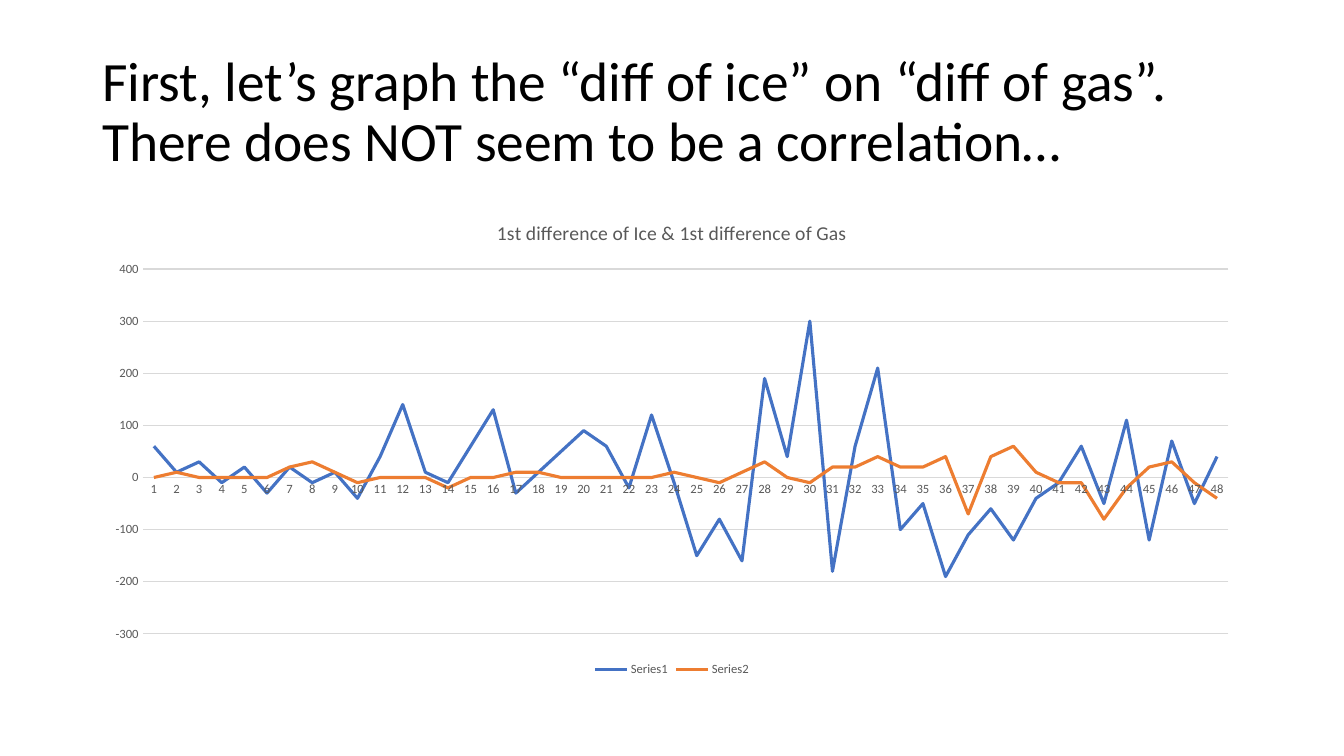
import pptx
import pptx.chart.data
import pptx.dml.color
import pptx.enum.chart
import pptx.enum.text
import pptx.util

Pt = pptx.util.Pt
FONT = "Calibri"
GREY = "595959"
PALE = "D9D9D9"
ICE = [60, 10, 30, -10, 20, -30, 20, -10, 10, -40, 40, 140,
       10, -10, 60, 130, -30, 10, 50, 90, 60, -20, 120, -10,
       -150, -80, -160, 190, 40, 300, -180, 60, 210, -100, -50, -190,
       -110, -60, -120, -40, -10, 60, -50, 110, -120, 70, -50, 40]
GAS = [0, 10, 0, 0, 0, 0, 20, 30, 10, -10, 0, 0,
       0, -20, 0, 0, 10, 10, 0, 0, 0, 0, 0, 10,
       0, -10, 10, 30, 0, -10, 20, 20, 40, 20, 20, 40,
       -70, 40, 60, 10, -10, -10, -80, -20, 20, 30, -10, -40]
LINES = [("Series1", ICE, "4472C4"), ("Series2", GAS, "ED7D31")]


def color(code):
    """Turn a hex string into a colour."""
    return pptx.dml.color.RGBColor.from_string(code)


def style(font, size, code):
    """Set face, size and colour of a font."""
    font.name = FONT
    font.size = Pt(size)
    font.bold = False
    font.color.rgb = color(code)


def stroke(line, code, width):
    """Give a line its colour and width."""
    line.color.rgb = color(code)
    line.width = Pt(width)


def add_run(para, text, size, code):
    """Add one styled run to a paragraph."""
    run = para.add_run()
    run.text = text
    style(run.font, size, code)


def add_head(slide, text, box):
    """Add the heading of the slide."""
    frame = slide.shapes.add_textbox(*map(Pt, box)).text_frame
    frame.word_wrap = True
    frame.vertical_anchor = pptx.enum.text.MSO_ANCHOR.MIDDLE
    para = frame.paragraphs[0]
    para.line_spacing = 0.9
    add_run(para, text, 39.6, "000000")


def set_axes(chart):
    """Style both axes and the grid."""
    for axis in (chart.category_axis, chart.value_axis):
        axis.major_tick_mark = pptx.enum.chart.XL_TICK_MARK.NONE
        axis.minor_tick_mark = pptx.enum.chart.XL_TICK_MARK.NONE
        style(axis.tick_labels.font, 9, GREY)
    stroke(chart.category_axis.format.line, PALE, 0.75)
    scale = chart.value_axis
    scale.minimum_scale, scale.maximum_scale, scale.major_unit = -300, 400, 100
    scale.format.line.fill.background()
    scale.has_major_gridlines = True
    stroke(scale.major_gridlines.format.line, PALE, 0.75)


def add_graph(slide, title, lines, box):
    """Add the line chart with title and legend."""
    data = pptx.chart.data.CategoryChartData()
    data.categories = [str(n + 1) for n in range(len(lines[0][1]))]
    for name, values, _ in lines:
        data.add_series(name, values)
    kind = pptx.enum.chart.XL_CHART_TYPE.LINE
    chart = slide.shapes.add_chart(kind, *map(Pt, box), data).chart
    style(chart.font, 10, "000000")
    chart.has_title = True
    add_run(chart.chart_title.text_frame.paragraphs[0], title, 14, GREY)
    chart.chart_title.include_in_layout = False
    chart.has_legend = True
    chart.legend.position = pptx.enum.chart.XL_LEGEND_POSITION.BOTTOM
    chart.legend.include_in_layout = False
    style(chart.legend.font, 9, GREY)
    set_axes(chart)
    chart.plots[0].vary_by_categories = False
    for series, (_, _, code) in zip(chart.plots[0].series, lines):
        series.smooth = False
        series.marker.style = pptx.enum.chart.XL_MARKER_STYLE.NONE
        stroke(series.format.line, code, 2.25)


def main():
    """Build the slide and save it."""
    deck = pptx.Presentation()
    deck.slide_width, deck.slide_height = Pt(960), Pt(540)
    slide = deck.slides.add_slide(deck.slide_layouts[6])
    add_head(slide, "First, let’s graph the “diff of ice” on “diff of gas”. "
             "There does NOT seem to be a correlation…", (66, 28.75, 828, 104.4))
    add_graph(slide, "1st difference of Ice & 1st difference of Gas", LINES,
              (66, 143.75, 828, 342.6))
    deck.save("out.pptx")


if __name__ == "__main__":
    main()
